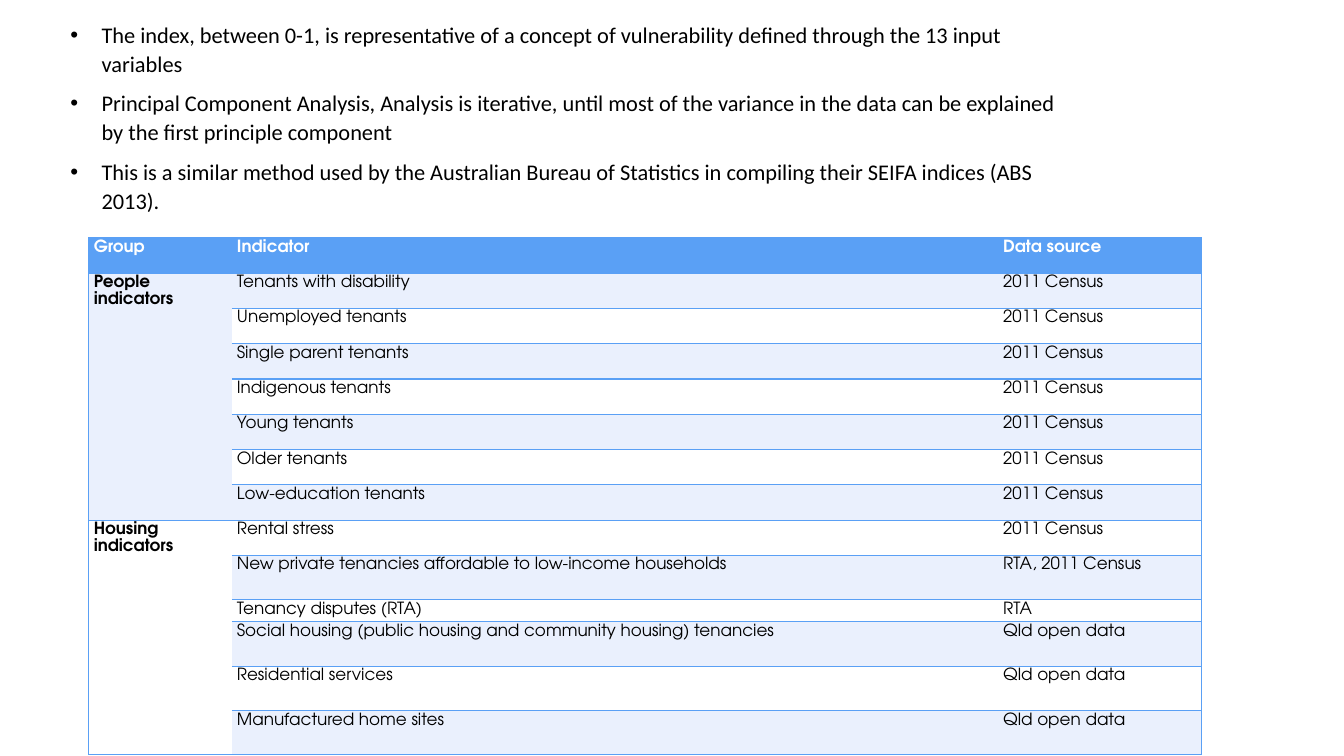
from pptx import Presentation
from pptx.dml.color import RGBColor
from pptx.enum.text import MSO_AUTO_SIZE as AutoSize
from pptx.oxml.ns import qn
from pptx.util import Emu, Pt
from lxml.etree import SubElement

PX = 9144  # 100 px to the inch
BLUE, PALE, WHITE, BLACK = "5AA0F5", "EAF0FD", "FFFFFF", "000000"

BULLETS = [
    "The index, between 0-1, is representative of a concept of vulnerability "
    "defined through the 13 input variables",
    "Principal Component Analysis, Analysis is iterative, until most of the variance "
    "in the data can be explained by the first principle component",
    "This is a similar method used by the Australian Bureau of Statistics in compiling "
    "their SEIFA indices (ABS 2013).",
]

HEADER = ("Group", "Indicator", "Data source")
CENSUS, OPEN_DATA = "2011 Census", "Qld open data"
GROUPS = {
    "People indicators": [
        ("Tenants with disability", CENSUS),
        ("Unemployed tenants", CENSUS),
        ("Single parent tenants", CENSUS),
        ("Indigenous tenants", CENSUS),
        ("Young tenants", CENSUS),
        ("Older tenants", CENSUS),
        ("Low-education tenants", CENSUS),
    ],
    "Housing indicators": [
        ("Rental stress", CENSUS),
        ("New private tenancies affordable to low-income households", "RTA, 2011 Census"),
        ("Tenancy disputes (RTA)", "RTA"),
        ("Social housing (public housing and community housing) tenancies", OPEN_DATA),
        ("Residential services", OPEN_DATA),
        ("Manufactured home sites", OPEN_DATA),
    ],
}
COL_WIDTHS = (142, 760, 202)
ROW_HEIGHTS = [35] * 9 + [44, 22] + [44] * 3


def px(n):
    return Emu(n * PX)


def rgb(hex_text):
    return RGBColor.from_string(hex_text)


def set_all(target, values):
    for name, value in values.items():
        setattr(target, name, value)


def write(p, text, font, size, color, bold=False):
    set_all(p, {"line_spacing": 1.07, "space_after": Pt(8)})
    r = p.add_run()
    r.text = text
    set_all(r.font, {"name": font, "size": Pt(size), "bold": bold})
    r.font.color.rgb = rgb(color)


def add_bullet(p, indent):
    pPr = p._p.get_or_add_pPr()
    pPr.set("marL", str(px(indent)))
    pPr.set("indent", str(px(-indent)))
    SubElement(pPr, qn("a:buFont"), typeface="Arial")
    SubElement(pPr, qn("a:buChar"), char="•")
    tabs = SubElement(pPr, qn("a:tabLst"))
    SubElement(tabs, qn("a:tab"), pos=str(px(50)), algn="l")


def add_bullets(s, texts, x, y, w, h):
    tf = s.shapes.add_textbox(px(x), px(y), px(w), px(h)).text_frame
    set_all(tf, {"word_wrap": True, "auto_size": AutoSize.SHAPE_TO_FIT_TEXT})
    for i, text in enumerate(texts):
        p = tf.add_paragraph() if i else tf.paragraphs[0]
        add_bullet(p, 31)
        write(p, text, "Calibri", 16, BLACK)


def style_cell(cell, fill, sides):
    """Draw the named sides (of L, R, T, B) in blue and hide the others."""
    set_all(cell, {"margin_left": px(5), "margin_right": px(5),
                   "margin_top": px(1), "margin_bottom": 0})
    tcPr = cell._tc.get_or_add_tcPr()
    for side in "LRTB":
        ln = SubElement(tcPr, qn(f"a:ln{side}"), w=str(Pt(1)))
        if side in sides:
            color = SubElement(ln, qn("a:solidFill"))
            SubElement(color, qn("a:srgbClr"), val=BLUE)
        else:
            SubElement(ln, qn("a:noFill"))
    cell.fill.solid()
    cell.fill.fore_color.rgb = rgb(fill)


def add_indicator_table(s, x, y):
    rows = [HEADER]
    spans = []
    for group, items in GROUPS.items():
        spans.append((len(rows), len(rows) + len(items) - 1))
        rows += [("" if i else group, *item) for i, item in enumerate(items)]

    table = s.shapes.add_table(len(rows), len(HEADER), px(x), px(y),
                               px(sum(COL_WIDTHS)), px(sum(ROW_HEIGHTS))).table
    for column, width in zip(table.columns, COL_WIDTHS):
        column.width = px(width)
    for row, height in zip(table.rows, ROW_HEIGHTS):
        row.height = px(height)

    # Cells: banded rows, bold header and group names
    for i, texts in enumerate(rows):
        band = PALE if i % 2 else WHITE
        for j, text in enumerate(texts):
            cell = table.cell(i, j)
            sides = ("LTB", "TB", "RTB")[j]
            if not text:
                sides = "LB" if i == len(rows) - 1 else "L"
            style_cell(cell, band if i else BLUE, sides)
            if text:
                write(cell.text_frame.paragraphs[0], text, "TeX Gyre Adventor", 12,
                      BLACK if i else WHITE, bold=i == 0 or j == 0)

    # Group names span their indicators
    for first, last in spans:
        table.cell(first, 0).merge(table.cell(last, 0))


def main():
    prs = Presentation()
    set_all(prs, {"slide_width": px(1333), "slide_height": px(750)})
    s = prs.slides.add_slide(prs.slide_layouts[6])
    add_indicator_table(s, 88, 236)
    add_bullets(s, BULLETS, 60, 14, 1003, 205)
    prs.save("out.pptx")


if __name__ == "__main__":
    main()
